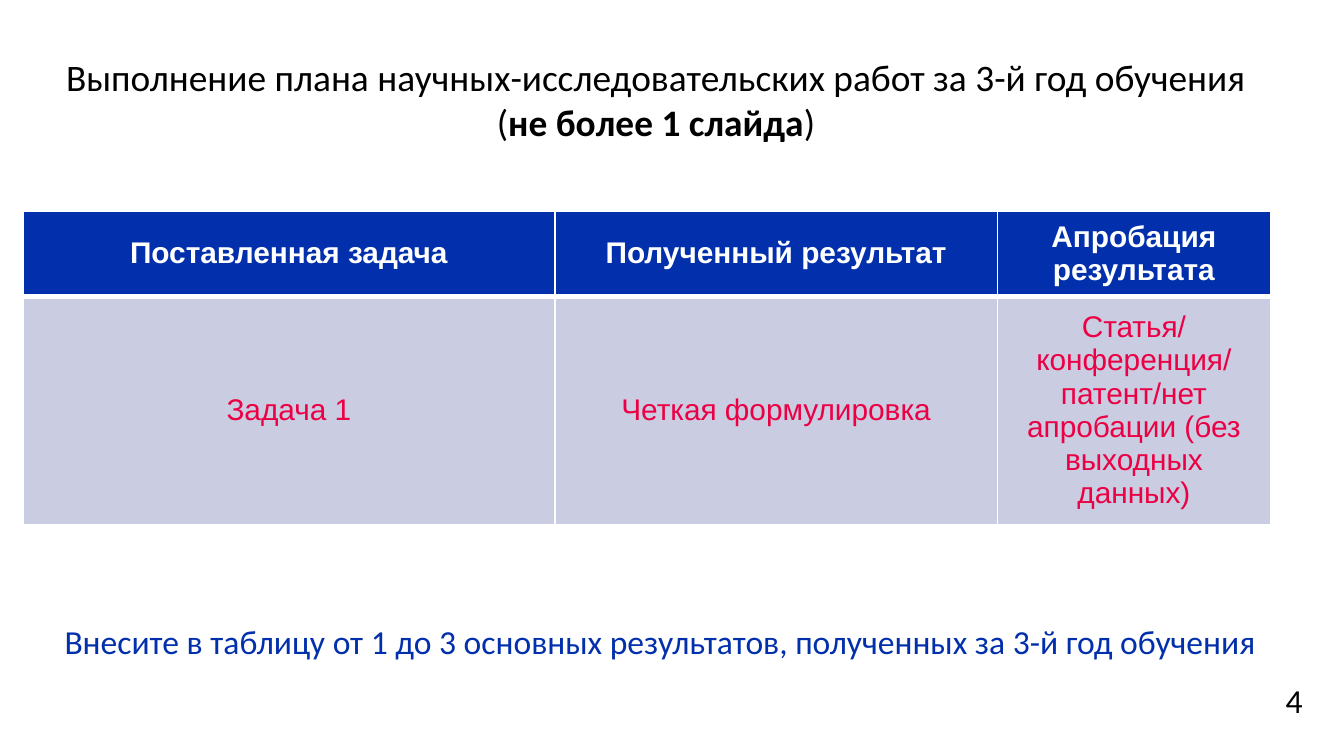
"""Build the slide on research plan progress in the third year of study."""
from dataclasses import dataclass

from lxml.etree import SubElement
from pptx import Presentation
from pptx.dml.color import RGBColor as Color
from pptx.enum.text import MSO_ANCHOR as Anchor, PP_ALIGN as Align
from pptx.oxml.ns import qn
from pptx.util import Cm, Pt


@dataclass(frozen=True)
class Theme:
    """Colours, fonts and type sizes of the slide."""
    black: str = "000000"
    white: str = "FFFFFF"
    blue: str = "0230AC"
    red: str = "EC0044"
    pale: str = "CACCE2"
    text_font: str = "Calibri"
    table_font: str = "Arial"
    title_size: int = 20
    note_size: int = 18
    table_size: int = 16


class SlideBuilder:
    """Add styled elements to the current slide."""

    def __init__(self, slide, theme):
        """Keep the slide and its theme."""
        self.slide = slide
        self.theme = theme

    def add_runs(self, paragraph, runs, align, color, **formats):
        """Fill a paragraph with (text, bold) runs in one style."""
        paragraph.alignment = align
        for text, bold in runs:
            run = paragraph.add_run()
            run.text = text
            run.font.color.rgb = Color.from_string(color)
            for name, value in {**formats, "bold": bold}.items():
                setattr(run.font, name, value)

    def text(self, box, runs, size, color, align=Align.LEFT, anchor=Anchor.TOP):
        """Add a wrapping text box."""
        frame = self.slide.shapes.add_textbox(*map(Cm, box)).text_frame
        for name, value in {"word_wrap": True, "vertical_anchor": anchor}.items():
            setattr(frame, name, value)
        self.add_runs(frame.paragraphs[0], runs, align, color,
                      size=Pt(size), name=self.theme.text_font)

    def border(self, cell, side, width):
        """Draw one white cell border."""
        properties = cell._tc.get_or_add_tcPr()
        line = SubElement(properties, qn(f"a:{side}"), w=str(Pt(width)))
        fill = SubElement(line, qn("a:solidFill"))
        SubElement(fill, qn("a:srgbClr"), val=self.theme.white)

    def cell(self, cell, text, header):
        """Style one table cell."""
        theme = self.theme
        for side in ("lnL", "lnR", "lnT", "lnB"):
            at_divider = side == ("lnB" if header else "lnT")
            self.border(cell, side, 3 if at_divider else 1)
        cell.fill.solid()
        cell.fill.fore_color.rgb = Color.from_string(theme.blue if header else theme.pale)
        cell.vertical_anchor = Anchor.MIDDLE
        self.add_runs(cell.text_frame.paragraphs[0], [(text, header)], Align.CENTER,
                      theme.white if header else theme.red,
                      size=Pt(theme.table_size), name=theme.table_font)

    def table(self, left, top, widths, heights, rows):
        """Add a table whose first row is the header."""
        table = self.slide.shapes.add_table(
            len(rows), len(widths), Cm(left), Cm(top),
            Cm(sum(widths)), Cm(sum(heights))).table
        for column, width in zip(table.columns, widths):
            column.width = Cm(width)
        for index, (height, texts) in enumerate(zip(heights, rows)):
            table.rows[index].height = Cm(height)
            for cell, text in zip(table.rows[index].cells, texts):
                self.cell(cell, text, header=index == 0)


def main():
    """Build and save the presentation."""
    theme = Theme()
    presentation = Presentation()
    presentation.slide_width, presentation.slide_height = Cm(25.4), Cm(14.29)
    slide = presentation.slides.add_slide(presentation.slide_layouts[6])
    builder = SlideBuilder(slide, theme)

    builder.text((0.97, 1.12, 22.86, 1.73),
                 [("Выполнение плана научных-исследовательских работ за 3-й год обучения (", False),
                  ("не более 1 слайда", True), (")", False)],
                 theme.title_size, theme.black, Align.CENTER, Anchor.BOTTOM)
    builder.table(0.43, 3.99, (10.06, 8.36, 5.16), (1.5, 4),
                  (("Поставленная задача", "Полученный результат", "Апробация результата"),
                   ("Задача 1", "Четкая формулировка",
                    "Статья/конференция/патент/нет апробации (без выходных данных)")))
    builder.text((24.05, 12.73, 0.74, 1.02), [("4", False)],
                 theme.note_size, theme.black)
    builder.text((0.97, 11.61, 23.29, 1.02),
                 [("Внесите в таблицу от 1 до 3 основных результатов, "
                   "полученных за 3-й год обучения", False)],
                 theme.note_size, theme.blue)
    presentation.save("out.pptx")


if __name__ == "__main__":
    main()
